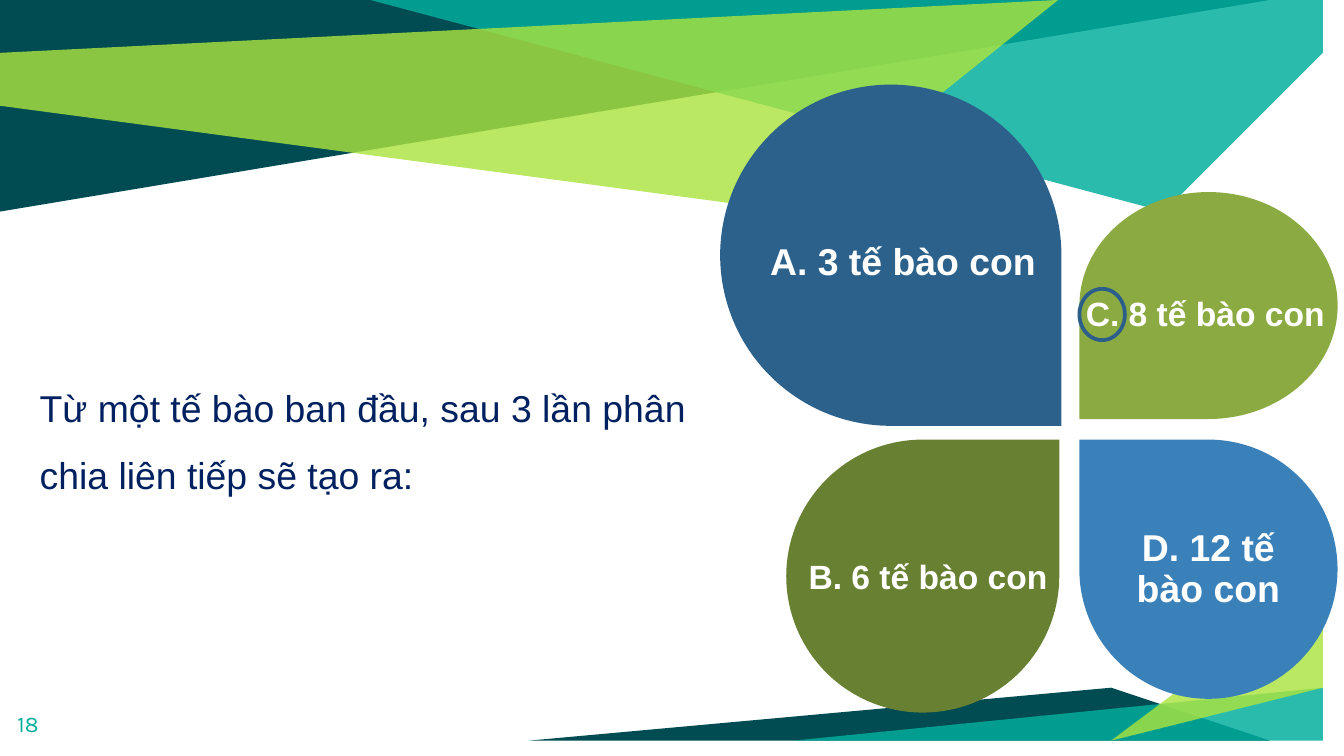
import pptx
import pptx.dml.color
import pptx.enum.shapes
import pptx.enum.text
import pptx.oxml.ns
import pptx.util
from lxml import etree

Cm = pptx.util.Cm
Pt = pptx.util.Pt
MSO_SHAPE = pptx.enum.shapes.MSO_SHAPE
ALIGN = pptx.enum.text.PP_ALIGN
ANCHOR = pptx.enum.text.MSO_ANCHOR


def rgb(color):
    return pptx.dml.color.RGBColor.from_string(color)


def write(tf, text, size=20, font="Arial", color="FFFFFF", bold=False,
          align=ALIGN.LEFT, line=None, space=0, inset_y=0.25, anchor=ANCHOR.TOP):
    """Fill a text frame with one paragraph; space is in points, inset_y in cm."""
    tf.word_wrap = True
    tf.vertical_anchor = anchor
    tf.margin_left = tf.margin_right = Cm(0.25)
    tf.margin_top = tf.margin_bottom = Cm(inset_y)
    p = tf.paragraphs[0]
    p.alignment = align
    p.space_before = p.space_after = Pt(space)
    if line:
        p.line_spacing = line
    r = p.add_run()
    r.text = text
    r.font.size = Pt(size)
    r.font.name = font
    r.font.bold = bold
    r.font.color.rgb = rgb(color)


prs = pptx.Presentation()
prs.slide_width, prs.slide_height = Cm(25.4), Cm(14.29)
s = prs.slides.add_slide(prs.slide_layouts[6])

# Background ribbons: colour, opacity in percent, corners in cm
ribbons = [
    ("004C52", 100, [(0, 0), (0, 3.71), (23.75, 0)]),
    ("00AE9D", 83, [(7.11, 0), (22.23, 3.53), (25.4, 0.71), (25.4, 0)]),
    ("ABE33F", 81, [(0, 1.3), (0, 2.36), (15.37, 4.09), (20.25, 0)]),
    ("004C52", 100, [(9.98, 14.29), (24.13, 14.29), (20.9, 12.95)]),
    ("00AE9D", 83, [(25.45, 13.03), (25.45, 14.35), (15.34, 14.35)]),
    ("ABE33F", 81, [(25.43, 13.06), (25.43, 11.18), (20.9, 14.35)]),
]
for color, opacity, corners in ribbons:
    fb = s.shapes.build_freeform(*corners[0], scale=Cm(1))
    fb.add_line_segments(corners[1:], close=True)
    sp = fb.convert_to_shape()
    sp.shadow.inherit = False
    sp.line.fill.background()
    sp.fill.solid()
    sp.fill.fore_color.rgb = rgb(color)
    if opacity < 100:
        clr = sp.element.spPr.find(".//" + pptx.oxml.ns.qn("a:srgbClr"))
        etree.SubElement(clr, pptx.oxml.ns.qn("a:alpha"), val=str(opacity * 1000))

# Question and slide number
question = s.shapes.add_textbox(Cm(0.5), Cm(6.6), Cm(13.7), Cm(2.4))
write(question.text_frame,
      "Từ một tế bào ban đầu, sau 3 lần phân chia liên tiếp sẽ tạo ra:",
      color="002060", line=1.5, space=2)
number = s.shapes.add_textbox(Cm(0.08), Cm(13.18), Cm(1.52), Cm(1.1))
write(number.text_frame, "18", size=12, font="Karla", color="00AE9D")

# Answer petals, each pointing at the centre: colour, box in cm, rotation, mirrored
petals = [
    ("2B618B", (13.61, 1.6, 6.45, 6.45), 90, False),
    ("688031", (14.86, 8.31, 5.16, 5.16), 0, False),
    ("8BAB42", (20.4, 3.63, 4.88, 4.29), 180, False),
    ("3A81BA", (20.4, 8.31, 4.88, 4.9), 0, True),
]
for color, box, rotation, mirrored in petals:
    petal = s.shapes.add_shape(MSO_SHAPE.TEAR, *map(Cm, box))
    petal.shadow.inherit = False
    petal.rotation = rotation
    petal.line.fill.background()
    petal.fill.solid()
    petal.fill.fore_color.rgb = rgb(color)
    if mirrored:
        petal.element.spPr.xfrm.set("flipH", "1")

# The last petal holds its own answer; the others have text boxes over them
write(petal.text_frame, "D. 12 tế bào con", bold=True, align=ALIGN.CENTER,
      line=Pt(22), space=2, anchor=ANCHOR.MIDDLE)
answers = [
    ("A. 3 tế bào con", (14.07, 4.37, 6, 1.12), 20, None, 0),
    ("C. 8 tế bào con", (20.1, 5.41, 5.36, 1.02), 18, None, 7),
    ("B. 6 tế bào con", (14.86, 10.54, 5.36, 0.86), 18, Pt(17), 7),
]
for text, box, size, line, space in answers:
    tb = s.shapes.add_textbox(*map(Cm, box))
    write(tb.text_frame, text, size=size, bold=True, align=ALIGN.CENTER,
          line=line, space=space, inset_y=0.13)

# Ring around the correct answer's letter
ring = s.shapes.add_shape(MSO_SHAPE.OVAL, Cm(20.4), Cm(5.46), Cm(0.86), Cm(0.97))
ring.shadow.inherit = False
ring.fill.background()
ring.line.color.rgb = rgb("2B5F8A")
ring.line.width = Pt(2)

prs.save("out.pptx")
